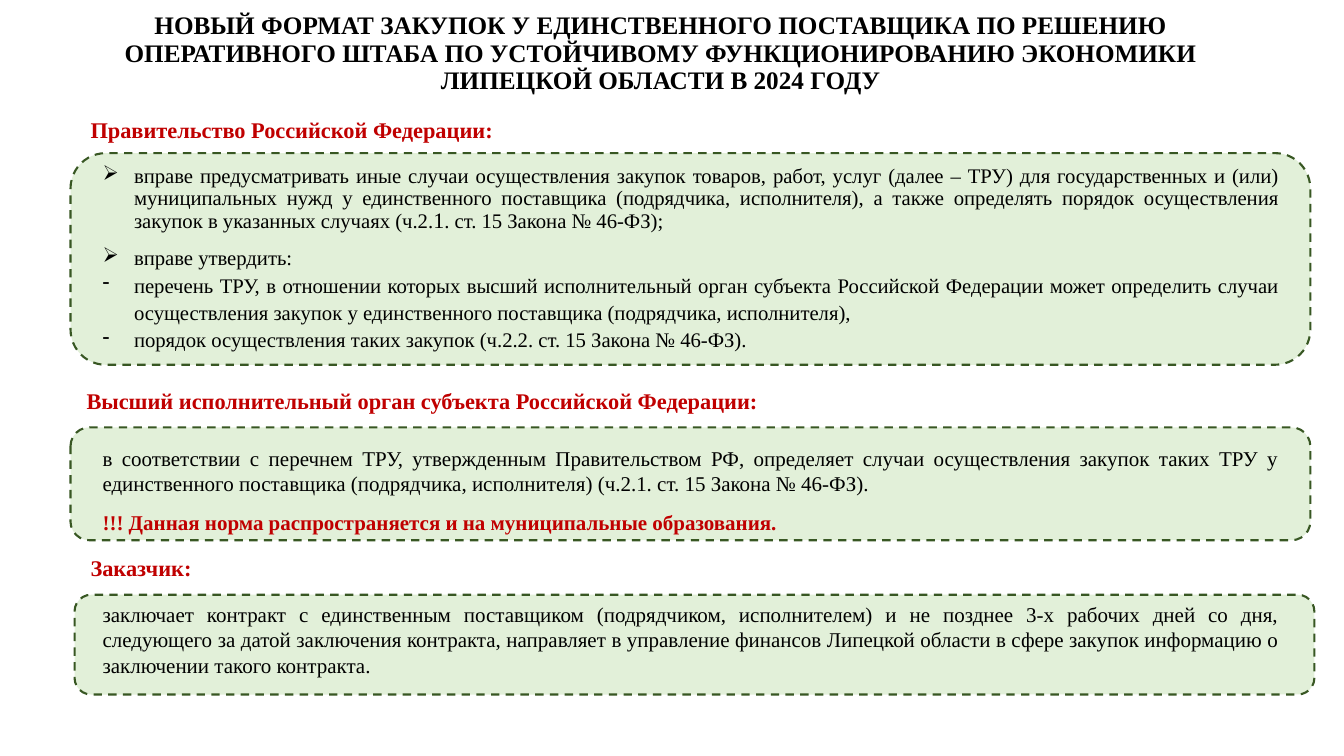
"""Build a slide on the new format of single-supplier procurement."""
from dataclasses import dataclass

from lxml import etree
from pptx import Presentation
from pptx.dml.color import RGBColor
from pptx.enum import dml, shapes, text
from pptx.oxml import ns
from pptx.util import Pt

TITLE = ("НОВЫЙ ФОРМАТ ЗАКУПОК У ЕДИНСТВЕННОГО ПОСТАВЩИКА ПО РЕШЕНИЮ "
         "ОПЕРАТИВНОГО ШТАБА ПО УСТОЙЧИВОМУ ФУНКЦИОНИРОВАНИЮ ЭКОНОМИКИ "
         "ЛИПЕЦКОЙ ОБЛАСТИ В 2024 ГОДУ")

GOVERNMENT = [
    ("arrow", [("вправе предусматривать иные случаи осуществления закупок товаров, "
                "работ, услуг (далее – ТРУ) для государственных и (или) муниципальных "
                "нужд у единственного поставщика (подрядчика, исполнителя), а также "
                "определять порядок осуществления закупок в указанных случаях (ч.2.",
                "bullet"),
               ("1", "digit"),
               (". ст. 15 Закона № 46-ФЗ);", "bullet")]),
    ("arrow", [("вправе утвердить: ", "bullet")]),
    ("dash", [("перечень ТРУ, в отношении которых высший исполнительный орган субъекта "
               "Российской Федерации может определить случаи осуществления закупок у "
               "единственного поставщика (подрядчика, исполнителя),", "bullet")]),
    ("dash", [("порядок осуществления таких закупок (ч.2.2. ст. 15 Закона № 46-ФЗ).",
               "bullet")]),
]
REGION = [
    ("plain", [("в соответствии с перечнем ТРУ, утвержденным Правительством РФ, "
                "определяет случаи осуществления закупок таких ТРУ у единственного "
                "поставщика (подрядчика, исполнителя) (ч.2.1. ст. 15 Закона № 46-ФЗ).",
                "body")]),
    ("plain", [("!!! Данная норма распространяется и на муниципальные образования.",
                "warning")]),
]
CUSTOMER = [
    ("plain", [("заключает контракт с единственным поставщиком (подрядчиком, "
                "исполнителем) и не позднее 3-х рабочих дней со дня, следующего за "
                "датой заключения контракта, направляет в управление финансов Липецкой "
                "области в сфере закупок информацию о заключении такого контракта.",
                "body")]),
]

SECTIONS = [
    dict(heading="Правительство Российской Федерации:", head_at=(57.6, 79.2),
         panel=(50.4, 109.4, 151.2), body=(114.5, 145.4), paragraphs=GOVERNMENT),
    dict(heading="Высший исполнительный орган субъекта Российской Федерации:",
         head_at=(54.7, 272.9), panel=(50.4, 305.3, 80.6), body=(314.6, 71.3),
         paragraphs=REGION),
    dict(heading="Заказчик:", head_at=(57.6, 392.4),
         panel=(53.3, 424.8, 71.3), body=(426.2, 59), paragraphs=CUSTOMER),
]
HEAD_SIZE = (857.5, 26.6)
PANEL_WIDTH = 885.6
BODY_LEFT, BODY_WIDTH = 66.2, 854.6
INDENT = 22.5
PARAGRAPH_KINDS = {"arrow": ("➢", 0.9, 10), "dash": ("-", 1.1, 0),
                   "plain": (None, 1.0, 10)}


@dataclass(frozen=True)
class Theme:
    """Colours, font and type styles of the slide."""
    font = "Times New Roman"
    white = RGBColor(0xFF, 0xFF, 0xFF)
    black = RGBColor(0, 0, 0)
    red = RGBColor(0xC0, 0, 0)
    panel = RGBColor(0xE2, 0xF0, 0xD9)
    border = RGBColor(0x38, 0x57, 0x23)
    styles = {"title": (18, black, True), "heading": (16, red, True),
              "bullet": (14.8, black, False), "digit": (15.7, black, False),
              "body": (15, black, False), "warning": (15, red, True)}


THEME = Theme()


def style_run(r, style):
    """Apply a named type style to a run."""
    size, color, bold = THEME.styles[style]
    r.font.name, r.font.size, r.font.bold = THEME.font, Pt(size), bold
    r.font.color.rgb = color


def add_block(s, kind, box, fill):
    """Add a filled shape without line or shadow."""
    sp = s.shapes.add_shape(kind, *map(Pt, box))
    sp.shadow.inherit = False
    sp.fill.solid()
    sp.fill.fore_color.rgb = fill
    sp.line.fill.background()
    return sp


def add_heading(s, words, box):
    """Add a red section heading."""
    tf = add_block(s, shapes.MSO_SHAPE.RECTANGLE, box, THEME.white).text_frame
    tf.word_wrap = True
    tf.vertical_anchor = text.MSO_ANCHOR.TOP
    p = tf.paragraphs[0]
    p.text = words
    p.alignment = text.PP_ALIGN.JUSTIFY
    style_run(p.runs[0], "heading")


def add_panel(s, box):
    """Add a green panel with a dashed border."""
    sp = add_block(s, shapes.MSO_SHAPE.ROUNDED_RECTANGLE, box, THEME.panel)
    sp.line.color.rgb = THEME.border
    sp.line.width = Pt(1.5)
    sp.line.dash_style = dml.MSO_LINE.DASH


def set_bullet(p, char):
    """Give a paragraph a hanging bullet."""
    pPr = p._p.get_or_add_pPr()
    pPr.set("marL", str(Pt(INDENT)))
    pPr.set("indent", str(-Pt(INDENT)))
    etree.SubElement(pPr, ns.qn("a:buChar")).set("char", char)


def add_body(s, paragraphs, box):
    """Add the justified paragraphs of a section."""
    tf = s.shapes.add_textbox(*map(Pt, box)).text_frame
    tf.word_wrap = True
    for i, (kind, runs) in enumerate(paragraphs):
        p = tf.add_paragraph() if i else tf.paragraphs[0]
        bullet, spacing, before = PARAGRAPH_KINDS[kind]
        p.alignment = text.PP_ALIGN.JUSTIFY
        p.line_spacing, p.space_before = spacing, Pt(before)
        if bullet:
            set_bullet(p, bullet)
        for words, style in runs:
            r = p.add_run()
            r.text = words
            style_run(r, style)


def add_title(s):
    """Fill and place the title."""
    sp = s.shapes.title
    sp.left, sp.top, sp.width, sp.height = map(Pt, (28.8, 25.9, 886.3, 45.4))
    tf = sp.text_frame
    tf.text = TITLE
    tf.word_wrap = True
    tf.auto_size = text.MSO_AUTO_SIZE.NONE
    tf.vertical_anchor = text.MSO_ANCHOR.BOTTOM
    p = tf.paragraphs[0]
    p.alignment, p.line_spacing = text.PP_ALIGN.CENTER, 0.9
    style_run(p.runs[0], "title")


def main():
    """Build and save the slide."""
    prs = Presentation()
    prs.slide_width, prs.slide_height = Pt(960), Pt(540)
    s = prs.slides.add_slide(prs.slide_layouts[5])
    add_title(s)
    for section in SECTIONS:
        left, top, height = section["panel"]
        body_top, body_height = section["body"]
        add_heading(s, section["heading"], section["head_at"] + HEAD_SIZE)
        add_panel(s, (left, top, PANEL_WIDTH, height))
        add_body(s, section["paragraphs"],
                 (BODY_LEFT, body_top, BODY_WIDTH, body_height))
    prs.save("out.pptx")


if __name__ == "__main__":
    main()
